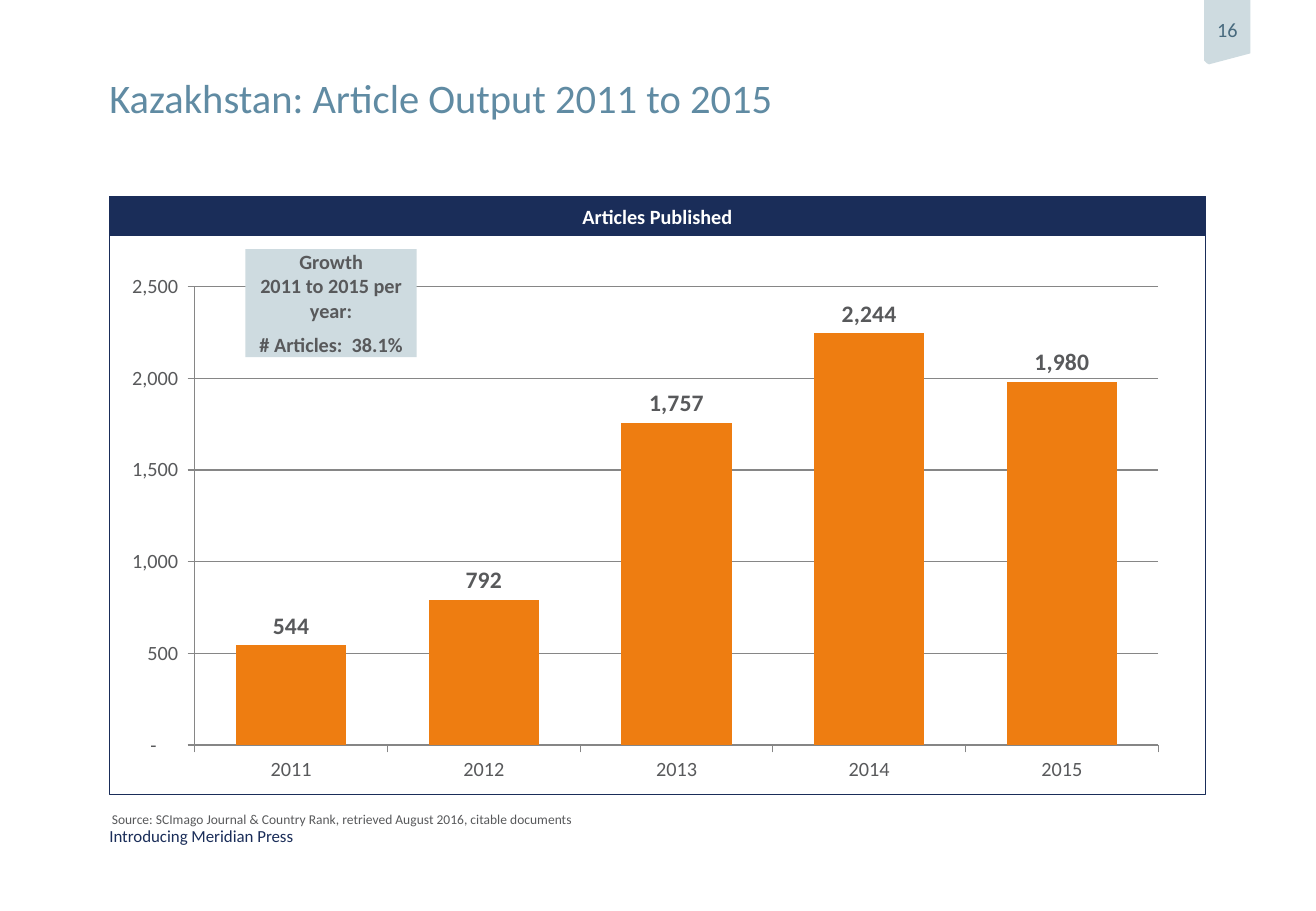
from dataclasses import dataclass

from lxml import etree
from pptx import Presentation
from pptx import util as u
from pptx.chart.data import CategoryChartData
from pptx.dml.color import RGBColor
from pptx.enum import chart as ch, shapes, text
from pptx.oxml.ns import qn


@dataclass(frozen=True)
class Theme:
    font: str = "Calibri"
    navy: str = "1A2D59"
    steel: str = "608BA3"
    slate: str = "486A7E"
    mist: str = "CEDBE0"
    grey: str = "58595B"
    axis: str = "868686"
    orange: str = "EE7D11"
    white: str = "FFFFFF"
    title: int = 24
    value: int = 14
    body: int = 12
    footer: int = 10
    source: int = 8


THEME = Theme()
NUMBERS = r'_(* #,##0_);_(* \(#,##0\);_(* "-"??_);_('
YEARS = ["2011", "2012", "2013", "2014", "2015"]
ARTICLES = [544, 792, 1757, 2244, 1980]


def inches(*lengths):
    return [u.Inches(length) for length in lengths]


def style_font(font, size, color, bold=False):
    font.name = THEME.font
    font.size = u.Pt(size)
    font.bold = bold
    font.color.rgb = RGBColor.from_string(color)


def write(shape, lines, size, color, bold=False, align=text.PP_ALIGN.LEFT,
          anchor=text.MSO_ANCHOR.MIDDLE, wrap=True, bottom=0):
    """Fill a shape with paragraphs that share one style; 6 pt separates them."""
    frame = shape.text_frame
    frame.word_wrap = wrap
    frame.vertical_anchor = anchor
    frame.margin_left = frame.margin_right = frame.margin_top = 0
    frame.margin_bottom = u.Inches(bottom)
    for index, line in enumerate(lines):
        paragraph = frame.add_paragraph() if index else frame.paragraphs[0]
        paragraph.text = line
        paragraph.alignment = align
        if index:
            paragraph.space_before = u.Pt(6)
        style_font(paragraph.font, size, color, bold)


def paint(shape, fill=None, line=None):
    shape.shadow.inherit = False
    if fill:
        shape.fill.solid()
        shape.fill.fore_color.rgb = RGBColor.from_string(fill)
    else:
        shape.fill.background()
    if line:
        shape.line.color.rgb = RGBColor.from_string(line)
        shape.line.width = u.Pt(1)
    else:
        shape.line.fill.background()


def add_rect(slide, box, fill=None, line=None):
    rect = slide.shapes.add_shape(shapes.MSO_SHAPE.RECTANGLE, *inches(*box))
    paint(rect, fill, line)
    return rect


def add_label(slide, box, line, size, color, **options):
    write(slide.shapes.add_textbox(*inches(*box)), [line], size, color, **options)


def add_page_tab(slide, box, number):
    left, top, width, height = box
    right, bottom = left + width, top + height
    outline = [(right, top), (right, bottom - 0.09), (left + 0.04, bottom),
               (left + 0.02, bottom - 0.01), (left, bottom - 0.03)]
    builder = slide.shapes.build_freeform(*inches(left, top))
    builder.add_line_segments([inches(*point) for point in outline], close=True)
    tab = builder.convert_to_shape()
    paint(tab, THEME.mist)
    write(tab, [number], THEME.body, THEME.slate, align=text.PP_ALIGN.CENTER,
          wrap=False, bottom=0.04)


def set_plot_area(chart, x, y, w, h):
    """Fix the inner plot area as fractions of the chart."""
    plot_area = chart._chartSpace.chart.plotArea
    for old in plot_area.findall(qn("c:layout")):
        plot_area.remove(old)
    layout = etree.Element(qn("c:layout"))
    manual = etree.SubElement(layout, qn("c:manualLayout"))
    settings = [("layoutTarget", "inner"), ("xMode", "edge"), ("yMode", "edge"),
                ("x", x), ("y", y), ("w", w), ("h", h)]
    for tag, value in settings:
        etree.SubElement(manual, qn(f"c:{tag}")).set("val", str(value))
    plot_area.insert(0, layout)


def add_article_chart(slide, box):
    articles = CategoryChartData(number_format=NUMBERS)
    articles.categories = YEARS
    articles.add_series("Articles", ARTICLES)
    chart = slide.shapes.add_chart(
        ch.XL_CHART_TYPE.COLUMN_CLUSTERED, *inches(*box), articles).chart
    chart.has_legend = chart.has_title = False
    style_font(chart.font, THEME.body, THEME.grey)
    set_plot_area(chart, 0.078, 0.091, 0.879, 0.821)

    axis_color = RGBColor.from_string(THEME.axis)
    counts = chart.value_axis
    for axis in (chart.category_axis, counts):
        axis.major_tick_mark = ch.XL_TICK_MARK.OUTSIDE
        axis.format.line.color.rgb = axis_color
        style_font(axis.tick_labels.font, THEME.body, THEME.grey)
    counts.minimum_scale, counts.maximum_scale, counts.major_unit = 0, 2500, 500
    counts.has_major_gridlines = True
    counts.major_gridlines.format.line.color.rgb = axis_color
    counts.tick_labels.number_format = NUMBERS
    counts.tick_labels.number_format_is_linked = False

    plot = chart.plots[0]
    plot.gap_width = 75
    plot.vary_by_categories = False
    bars = plot.series[0].format.fill
    bars.solid()
    bars.fore_color.rgb = RGBColor.from_string(THEME.orange)
    plot.has_data_labels = True
    labels = plot.data_labels
    labels.show_value = True
    labels.number_format = NUMBERS
    labels.number_format_is_linked = False
    labels.position = ch.XL_LABEL_POSITION.OUTSIDE_END
    style_font(labels.font, THEME.value, THEME.grey, bold=True)


def add_chart_panel(slide, box):
    left, top, width, height = box
    heading = add_rect(slide, (left, top, width, 0.32), THEME.navy, THEME.navy)
    write(heading, ["Articles Published"], THEME.body, THEME.white, bold=True,
          align=text.PP_ALIGN.CENTER)
    add_rect(slide, box, line=THEME.navy)
    add_article_chart(slide, (left, top + 0.32, width, height - 0.32))
    growth = add_rect(slide, (left + 1.12, top + 0.43, 1.41, 0.89), THEME.mist)
    write(growth, ["Growth\v2011 to 2015 per year:", "# Articles:  38.1%"],
          THEME.body, THEME.grey, bold=True, align=text.PP_ALIGN.CENTER)


def main():
    deck = Presentation()
    deck.slide_width, deck.slide_height = inches(10.83, 7.5)
    slide = deck.slides.add_slide(deck.slide_layouts[6])
    add_label(slide, (0.9, 6.8, 3.84, 0.17), "Introducing Meridian Press",
              THEME.footer, THEME.navy)
    add_page_tab(slide, (9.91, 0, 0.38, 0.53), "16")
    add_label(slide, (0.9, 0.6, 9.39, 0.33), "Kazakhstan: Article Output 2011 to 2015",
              THEME.title, THEME.steel, anchor=text.MSO_ANCHOR.TOP)
    add_chart_panel(slide, (0.9, 1.62, 9.02, 4.92))
    add_label(slide, (0.92, 6.68, 3.89, 0.13),
              "Source: SCImago Journal & Country Rank, retrieved August 2016, "
              "citable documents",
              THEME.source, THEME.grey, anchor=text.MSO_ANCHOR.TOP, wrap=False)
    deck.save("out.pptx")


if __name__ == "__main__":
    main()
